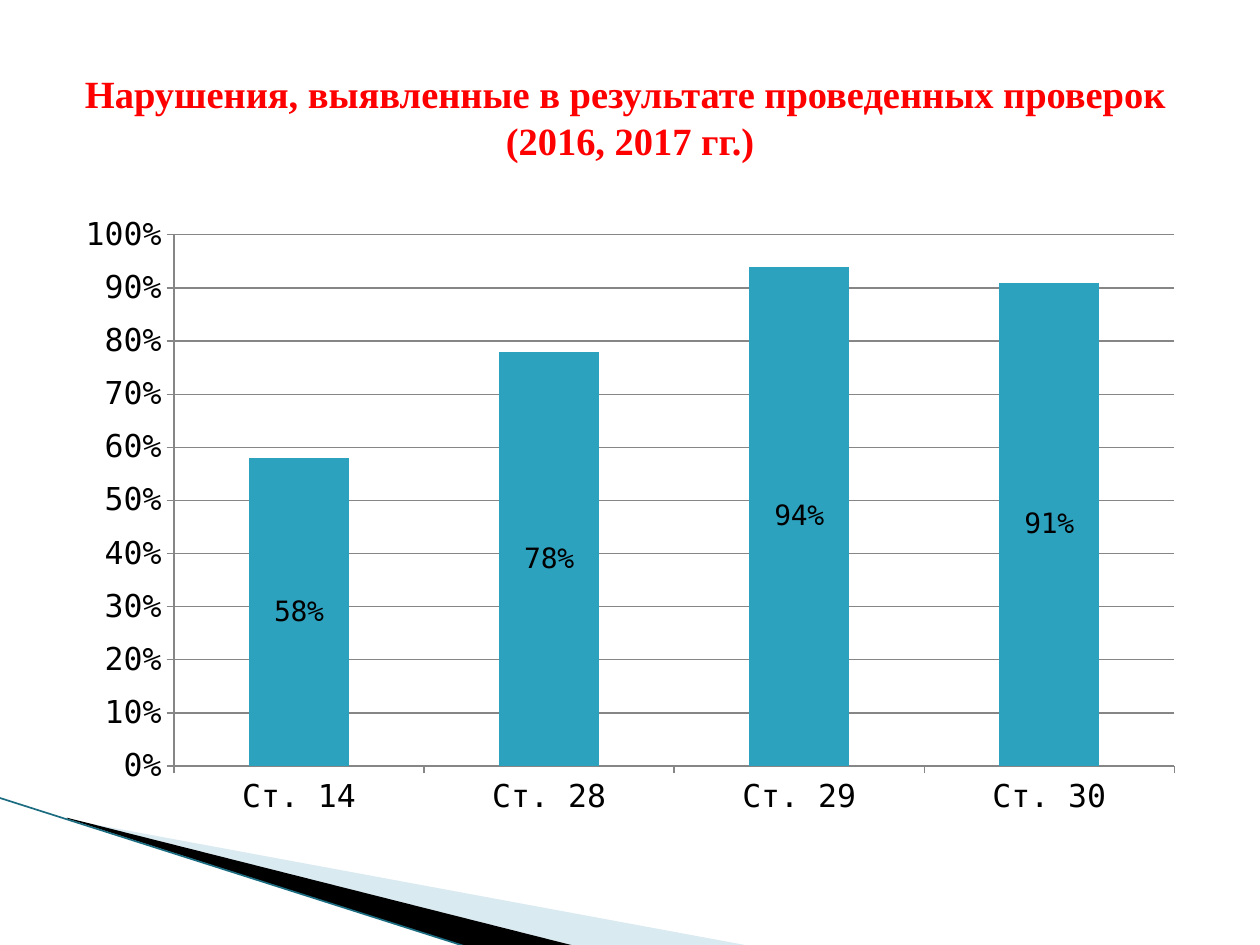
from pptx import Presentation
from pptx.chart.data import CategoryChartData
from pptx.dml.color import RGBColor
from pptx.enum.chart import XL_CHART_TYPE as ChartType, XL_LABEL_POSITION as LabelPosition
from pptx.enum.chart import XL_TICK_MARK as TickMark
from pptx.enum.shapes import MSO_CONNECTOR as Connector
from pptx.enum.text import MSO_ANCHOR as Anchor, MSO_AUTO_SIZE as AutoSize, PP_ALIGN as Align
from pptx.oxml.ns import qn
from pptx.util import Pt
from lxml.etree import SubElement


def color(value):
    return RGBColor.from_string(value)


def assign(target, values):
    for name, value in values.items():
        setattr(target, name, value)


class SlideBuilder:
    """Holds the style and the current slide and draws its elements."""

    title_font = {"name": "Times New Roman", "size": Pt(22), "bold": True}
    chart_font = {"name": "DejaVu Sans Mono", "size": Pt(18), "bold": False}
    label_font = {"name": "DejaVu Sans Mono", "size": Pt(16), "bold": False}
    red, black, teal, grid = "FF0000", "000000", "2DA2BF", "868686"

    def __init__(self, deck):
        self.page = deck.slides.add_slide(deck.slide_layouts[5])

    def font(self, target, values, value):
        assign(target, values)
        target.color.rgb = color(value)

    def title(self, text, left, top, width, height):
        box = self.page.shapes.title
        assign(box, {"left": Pt(left), "top": Pt(top), "width": Pt(width), "height": Pt(height)})
        frame = box.text_frame
        frame.text = text
        assign(frame, {"word_wrap": True, "auto_size": AutoSize.NONE,
                       "vertical_anchor": Anchor.MIDDLE})
        para = frame.paragraphs[0]
        para.alignment = Align.CENTER
        for span in para.runs:
            self.font(span.font, self.title_font, self.red)

    def wedge(self, points, fill, opacity=100):
        start, *rest = [(Pt(x), Pt(y)) for x, y in points]
        builder = self.page.shapes.build_freeform(*start)
        builder.add_line_segments(rest)
        shape = builder.convert_to_shape()
        shape.shadow.inherit = False
        shape.fill.solid()
        shape.fill.fore_color.rgb = color(fill)
        shape.line.fill.background()
        if opacity < 100:
            tint = shape.fill._xPr.find(qn("a:solidFill"))[0]
            SubElement(tint, qn("a:alpha"), val=str(opacity * 1000))

    def line(self, start, end, value, width):
        ends = [Pt(number) for number in (*start, *end)]
        connector = self.page.shapes.add_connector(Connector.STRAIGHT, *ends)
        connector.line.color.rgb = color(value)
        connector.line.width = Pt(width)
        SubElement(connector._element.spPr, qn("a:effectLst"))

    def column_chart(self, values, left, top, width, height):
        data = CategoryChartData(number_format="0%")
        data.categories = list(values)
        data.add_series("Series 1", list(values.values()))
        chart = self.page.shapes.add_chart(
            ChartType.COLUMN_STACKED, Pt(left), Pt(top), Pt(width), Pt(height), data).chart
        assign(chart, {"has_legend": False, "has_title": False})
        self.font(chart.font, self.chart_font, self.black)
        for axis in (chart.category_axis, chart.value_axis):
            axis.major_tick_mark = TickMark.OUTSIDE
            axis.format.line.color.rgb = color(self.grid)
        axis = chart.value_axis
        assign(axis, {"minimum_scale": 0, "maximum_scale": 1, "major_unit": 0.1,
                      "has_major_gridlines": True})
        assign(axis.tick_labels, {"number_format": "0%", "number_format_is_linked": False})
        axis.major_gridlines.format.line.color.rgb = color(self.grid)
        plot = chart.plots[0]
        assign(plot, {"gap_width": 150, "overlap": 100, "vary_by_categories": False,
                      "has_data_labels": True})
        labels = plot.data_labels
        assign(labels, {"show_value": True, "number_format": "0%",
                        "number_format_is_linked": False, "position": LabelPosition.CENTER})
        self.font(labels.font, self.label_font, self.black)
        fill = plot.series[0].format.fill
        fill.solid()
        fill.fore_color.rgb = color(self.teal)


def main():
    deck = Presentation()
    assign(deck, {"slide_width": Pt(720), "slide_height": Pt(540)})
    slide = SlideBuilder(deck)
    slide.wedge([(39.6, 468.5), (428.4, 540.5), (328.3, 540.5), (39.6, 468)], "A0CBDC", 40)
    slide.wedge([(38.2, 467.3), (329, 540.7), (267.8, 541.4), (38.9, 468)], slide.black)
    slide.line((-0.7, 455.8), (267.8, 541.4), "1B6C80", 0.95)
    slide.column_chart({"Ст. 14": 0.58, "Ст. 28": 0.78, "Ст. 29": 0.94, "Ст. 30": 0.91},
                       36, 116.6, 648, 356.4)
    slide.title("Нарушения, выявленные в результате проведенных проверок \v(2016, 2017 гг.)",
                36, 21.6, 648, 90)
    deck.save("out.pptx")


if __name__ == "__main__":
    main()
